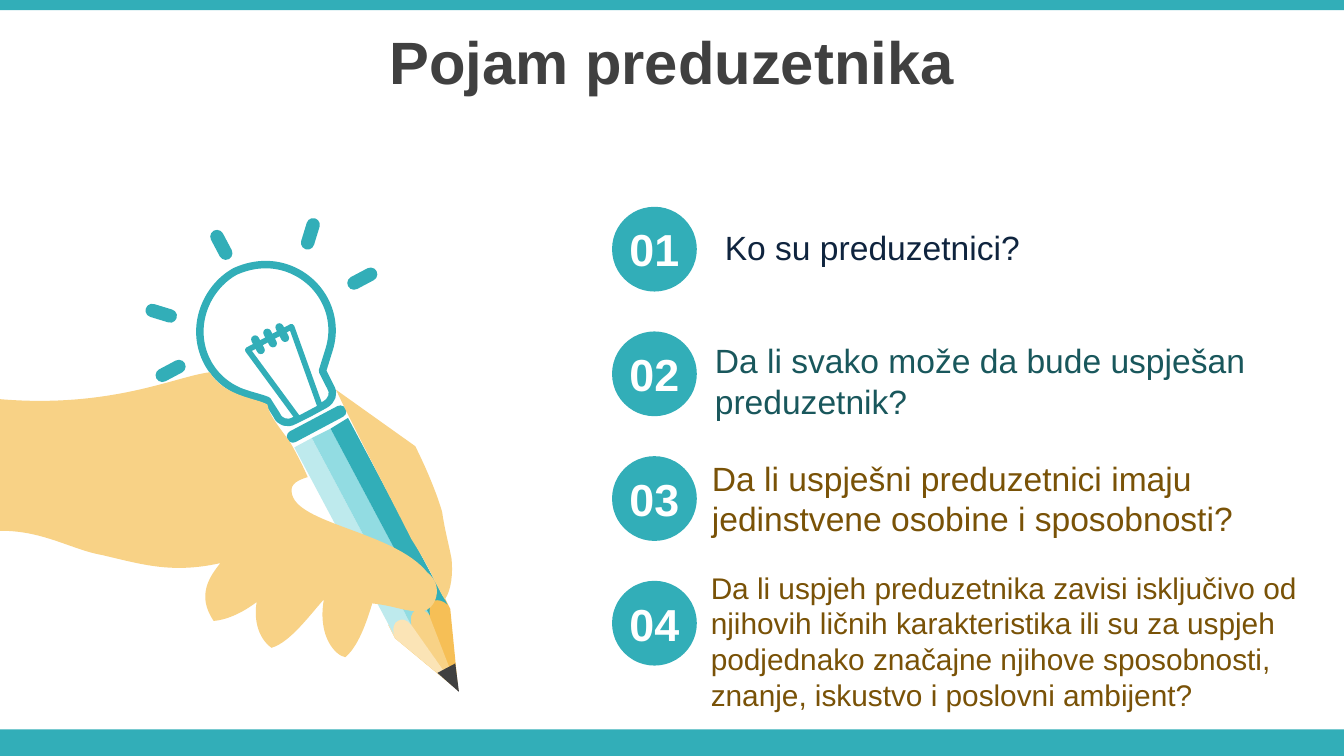
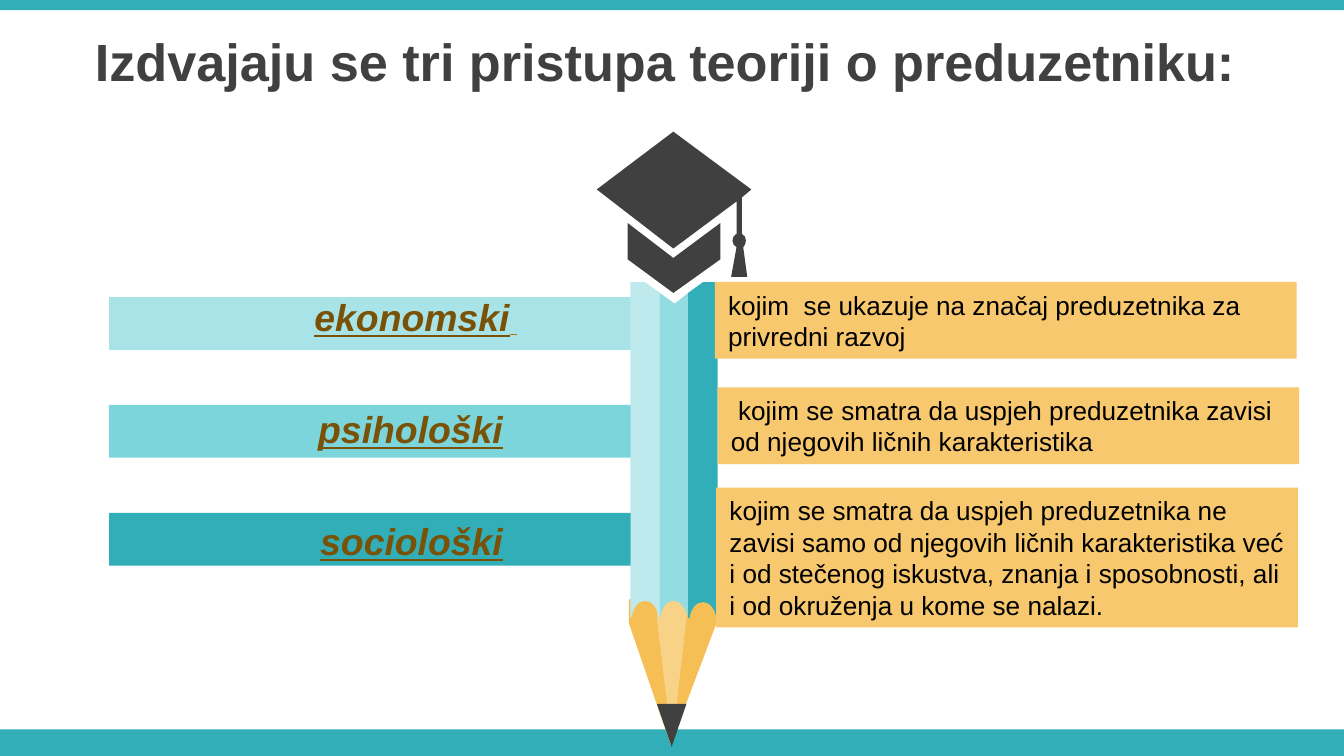
from dataclasses import dataclass

from lxml import etree
from pptx import Presentation
from pptx import util as u
from pptx.dml.color import RGBColor
from pptx.enum import shapes, text
from pptx.oxml.ns import qn

KIND = shapes.MSO_SHAPE
ALIGN = text.PP_ALIGN


@dataclass(frozen=True)
class Theme:
    font: str = "Arial"
    teal: str = "32AEB8"
    teal_mid: str = "92DCE2"
    teal_pale: str = "BEEAED"
    bar_light: str = "A8E3E7"
    bar_mid: str = "7DD5DC"
    wood: str = "F6BF56"
    skin: str = "F8D286"
    wood_pale: str = "FBE4B6"
    note: str = "F7C86E"
    dark: str = "404040"
    navy: str = "0F243E"
    deep_teal: str = "19575C"
    brown: str = "795207"
    ochre: str = "B57B0A"
    white: str = "FFFFFF"
    black: str = "000000"
    title: int = 32
    long_title: int = 28
    number: int = 24
    label: int = 20
    body: int = 18
    small_body: int = 16
    note_size: int = 14


THEME = Theme()
WIDTH, HEIGHT = 720, 405
ART_UNIT = u.Pt(0.72)

HAND_PENCIL = [
    (THEME.wood, [(289, 465), (330, 443), (335, 453), (341, 514), (294, 475)]),
    (THEME.skin, [(302, 457), (316, 450), (319, 457), (341, 514), (307, 467)]),
    (THEME.wood_pale, [(289, 465), (302, 458), (304, 460, 305, 462, 306, 465),
                       (340, 513), (294, 475)]),
    (THEME.teal_pale, [(219, 333), (232, 326), (306, 465),
                       (303, 461, 299, 460, 296, 462),
                       (293, 463, 292, 468, 293, 472)]),
    (THEME.teal_mid, [(232, 326), (246, 319), (320, 458),
                      (317, 454, 313, 453, 309, 454),
                      (306, 456, 305, 460, 306, 465)]),
    (THEME.teal, [(246, 319), (259, 311), (333, 450),
                  (330, 447, 326, 446, 323, 447),
                  (320, 449, 319, 453, 320, 458)]),
]

BULB = [(175, 202), (186, 197, 199, 195, 212, 199),
        (238, 207, 253, 234, 245, 260), (240, 276), (246, 288),
        (249, 293, 247, 298, 242, 301), (231, 307), (219, 313),
        (214, 316, 208, 314, 206, 309), (199, 298),
        (194, 296, 189, 295, 183, 293), (157, 285, 143, 258, 151, 232),
        (155, 219, 164, 208, 175, 202)]

FINGER = [(250, 290), (309, 332), (317, 348, 325, 367, 329, 381),
          (331, 395, 334, 405, 336, 416), (337, 426, 336, 439, 331, 446),
          (326, 439, 322, 426, 306, 401), (293, 375, 264, 320, 250, 290)]

HAND = [(156, 277), (167, 295, 190, 296, 199, 301),
        (200, 310, 213, 324, 217, 331), (222, 340, 225, 346, 229, 355),
        (222, 357, 216, 360, 217, 366), (219, 390, 293, 395, 318, 426),
        (331, 436, 324, 454, 314, 455), (300, 455, 295, 451, 277, 449),
        (271, 469, 265, 482, 257, 489), (250, 488, 236, 474, 241, 446),
        (231, 457, 216, 478, 202, 482), (191, 474, 189, 459, 191, 448),
        (183, 454, 171, 461, 159, 462), (146, 443, 156, 429, 164, 419),
        (128, 427, 106, 420, 76, 413), (53, 409, 31, 394, -2, 395),
        (0, 297), (83, 304, 131, 280, 156, 277)]

UPRIGHT_PENCIL = [
    (THEME.wood, [(468, 446), (533, 447), (533, 464), (499, 554), (468, 464)]),
    (THEME.skin, [(489, 446), (511, 446), (511, 458), (500, 554), (489, 463)]),
    (THEME.teal_pale, [(469, 210), (480, 210), (491, 218), (491, 459), (490, 459),
                       (489, 452, 485, 447, 480, 447),
                       (475, 447, 471, 452, 470, 459), (469, 459)]),
    (THEME.teal_mid, [(491, 218), (502, 226), (512, 218), (512, 460),
                      (511, 453, 506, 447, 501, 447),
                      (496, 447, 492, 453, 491, 460)]),
    (THEME.teal, [(523, 210), (534, 210), (534, 460), (533, 460),
                  (532, 453, 528, 448, 523, 448),
                  (518, 448, 514, 453, 513, 460), (512, 460), (512, 218)]),
]

CAP_BASE = [(467, 166), (501, 192), (536, 166), (536, 193), (501, 218), (467, 193)]

CAP_BOARD = [(501, 98), (559, 141), (552, 147), (552, 174),
             (554, 175, 555, 177, 555, 179), (555, 181, 554, 183, 553, 184),
             (556, 206), (544, 206), (548, 184), (546, 183, 545, 181, 545, 179),
             (545, 177, 546, 175, 548, 174), (548, 150), (501, 185), (444, 141)]

RAYS = [(166.3, 125.3, 17), (86.4, 167.8, 287), (118.6, 131.2, 332),
        (194.1, 149.3, 62), (91.4, 198.7, 242)]
FILAMENT_TIPS = [(138.2, 184.7), (144.7, 181.1), (151.2, 178.2)]
TILT = 332

QUESTIONS = [
    ("Ko su preduzetnici?", THEME.navy, THEME.body, (381.2, 118.1, 289.4, 28.8)),
    ("Da li svako može da bude uspješan preduzetnik?",
     THEME.deep_teal, THEME.body, (375.9, 178.8, 313.9, 51.1)),
    ("Da li uspješni preduzetnici imaju jedinstvene osobine i sposobnosti?",
     THEME.brown, THEME.body, (374.3, 241.7, 303.1, 65.5)),
    ("Da li uspjeh preduzetnika zavisi isključivo od njihovih ličnih "
     "karakteristika ili su za uspjeh podjednako značajne njihove sposobnosti, "
     "znanje, iskustvo i poslovni ambijent?",
     THEME.brown, THEME.small_body, (373.7, 301.4, 354.2, 85)),
]

APPROACHES = [
    ("ekonomski", 97.6, THEME.bar_light, (383, 151, 311.6, 41.2),
     "kojim  se ukazuje na značaj preduzetnika za privredni razvoj"),
    ("psihološki", 90.1, THEME.bar_mid, (384.4, 207.5, 311.6, 41.2),
     " kojim se smatra da uspjeh preduzetnika zavisi od njegovih ličnih karakteristika"),
    ("sociološki", 90.1, THEME.teal, (383.7, 261.2, 311.6, 75),
     "kojim se smatra da uspjeh preduzetnika ne zavisi samo od njegovih ličnih "
     "karakteristika već i od stečenog iskustva, znanja i sposobnosti, ali i od "
     "okruženja u kome se nalazi."),
]


def points(*lengths):
    return [u.Pt(length) for length in lengths]


def paint(shape, fill, line=None, weight=0):
    shape.shadow.inherit = False
    shape.fill.solid()
    shape.fill.fore_color.rgb = RGBColor.from_string(fill)
    if line:
        shape.line.color.rgb = RGBColor.from_string(line)
        shape.line.width = u.Pt(weight)
    else:
        shape.line.fill.background()
    return shape


def preset(slide, kind, box, fill, rotation=0, **outline):
    shape = slide.shapes.add_shape(kind, *points(*box))
    shape.rotation = rotation
    return paint(shape, fill, **outline)


def pill(slide, center_x, center_y, width, height, rotation):
    box = (center_x - width / 2, center_y - height / 2, width, height)
    bar = preset(slide, KIND.ROUNDED_RECTANGLE, box, THEME.teal, rotation)
    bar.adjustments[0] = 0.5


def bend_curves(outline, contours):
    nodes = iter(list(outline.element.iter(qn("a:moveTo"), qn("a:lnTo"))))
    for contour in contours:
        for step in contour:
            corners = [next(nodes) for _ in range(len(step) // 2)]
            if len(corners) == 3:
                curve = etree.Element(qn("a:cubicBezTo"))
                corners[0].addprevious(curve)
                for corner in corners:
                    curve.append(corner[0])
                    corner.getparent().remove(corner)


def freeform(slide, contours, fill, **line):
    builder = None
    for contour in contours:
        track = [(step[i], step[i + 1]) for step in contour
                 for i in range(0, len(step), 2)]
        if builder is None:
            builder = slide.shapes.build_freeform(*track[0], scale=ART_UNIT)
        else:
            builder.move_to(*track[0])
        builder.add_line_segments(track[1:], close=True)
    outline = builder.convert_to_shape()
    bend_curves(outline, contours)
    return paint(outline, fill, **line)


def write(frame, words, size, color, align=ALIGN.LEFT, bold=False, italic=False,
          underline=False, fit=text.MSO_AUTO_SIZE.SHAPE_TO_FIT_TEXT):
    frame.word_wrap = True
    frame.auto_size = fit
    paragraph = frame.paragraphs[0]
    paragraph.alignment = align
    run = paragraph.add_run()
    run.text = words
    font = run.font
    font.name, font.size = THEME.font, u.Pt(size)
    font.bold, font.italic, font.underline = bold, italic, underline
    font.color.rgb = RGBColor.from_string(color)


def textbox(slide, box, words, **style):
    frame = slide.shapes.add_textbox(*points(*box)).text_frame
    write(frame, words, **style)
    return frame


def titled_slide(deck, words, size):
    slide = deck.slides.add_slide(deck.slide_layouts[5])
    title = slide.shapes.title
    title.left, title.top, title.width, title.height = points(0, 10, WIDTH, 45.4)
    title.text_frame.vertical_anchor = text.MSO_ANCHOR.MIDDLE
    write(title.text_frame, words, size=size, color=THEME.dark, align=ALIGN.CENTER,
          bold=True, fit=text.MSO_AUTO_SIZE.NONE)
    return slide


def bands_to_master(deck, slide):
    tree = deck.slide_master.element.cSld.spTree
    for top, height in ((0, 5.5), (390.8, 14.2)):
        band = preset(slide, KIND.RECTANGLE, (0, top, WIDTH, height), THEME.teal)
        tree.insert(2, band.element)


def pencil(slide, parts, tip, rotation):
    for fill, contour in parts:
        freeform(slide, [contour], fill)
    preset(slide, KIND.ISOSCELES_TRIANGLE, tip, THEME.dark, rotation)


def writing_hand(slide):
    pencil(slide, HAND_PENCIL, (237.1, 357.1, 10.8, 14.4), 152)
    freeform(slide, [BULB], THEME.white, line=THEME.teal, weight=4)
    preset(slide, KIND.TRAPEZOID, (141.8, 178.6, 26.6, 45.4), THEME.white, 152,
           line=THEME.teal, weight=3)
    for x, y, rotation in RAYS:
        pill(slide, x, y, 7.2, 17.3, rotation)
    pill(slide, 169.6, 227.2, 35.3, 6.5, TILT)
    for x, y in FILAMENT_TIPS:
        pill(slide, x, y, 4.3, 10.8, TILT)
    freeform(slide, [FINGER, HAND], THEME.skin)


def question(slide, index, words, color, size, box):
    top = 110.8 + index * 66.8
    preset(slide, KIND.OVAL, (327.9, top, 45.4, 45.4), THEME.teal)
    textbox(slide, (325.4, top + 4.7, 50.4, 36), f"{index + 1:02}", size=THEME.number,
            color=THEME.white, align=ALIGN.CENTER, bold=True)
    textbox(slide, box, words, size=size, color=color)


def approach(slide, index, name, label_left, fill, note_box, meaning):
    preset(slide, KIND.RECTANGLE, (58.4, 159.2 + index * 57.8, 279.4, 28.3), fill)
    note = preset(slide, KIND.RECTANGLE, note_box, THEME.note)
    write(note.text_frame, meaning, size=THEME.note_size, color=THEME.black)
    return textbox(slide, (label_left, 154.1 + index * 60.1, 186.5, 31.7), name,
                   size=THEME.label, color=THEME.brown, align=ALIGN.RIGHT,
                   bold=True, italic=True, underline=True)


def main():
    deck = Presentation()
    deck.slide_width, deck.slide_height = points(WIDTH, HEIGHT)

    concept = titled_slide(deck, "Pojam preduzetnika", THEME.title)
    bands_to_master(deck, concept)
    writing_hand(concept)
    for index, entry in enumerate(QUESTIONS):
        question(concept, index, *entry)

    theories = titled_slide(deck, "Izdvajaju se tri pristupa teoriji o preduzetniku: ",
                            THEME.long_title)
    pencil(theories, UPRIGHT_PENCIL, (351.9, 377.1, 15.8, 23), 180)
    freeform(theories, [CAP_BASE, CAP_BOARD], THEME.dark)
    labels = [approach(theories, index, *entry) for index, entry in enumerate(APPROACHES)]
    write(labels[0], " ", size=THEME.note_size, color=THEME.ochre, align=ALIGN.RIGHT,
          bold=True, italic=True, underline=True)

    deck.save("out.pptx")


if __name__ == "__main__":
    main()
